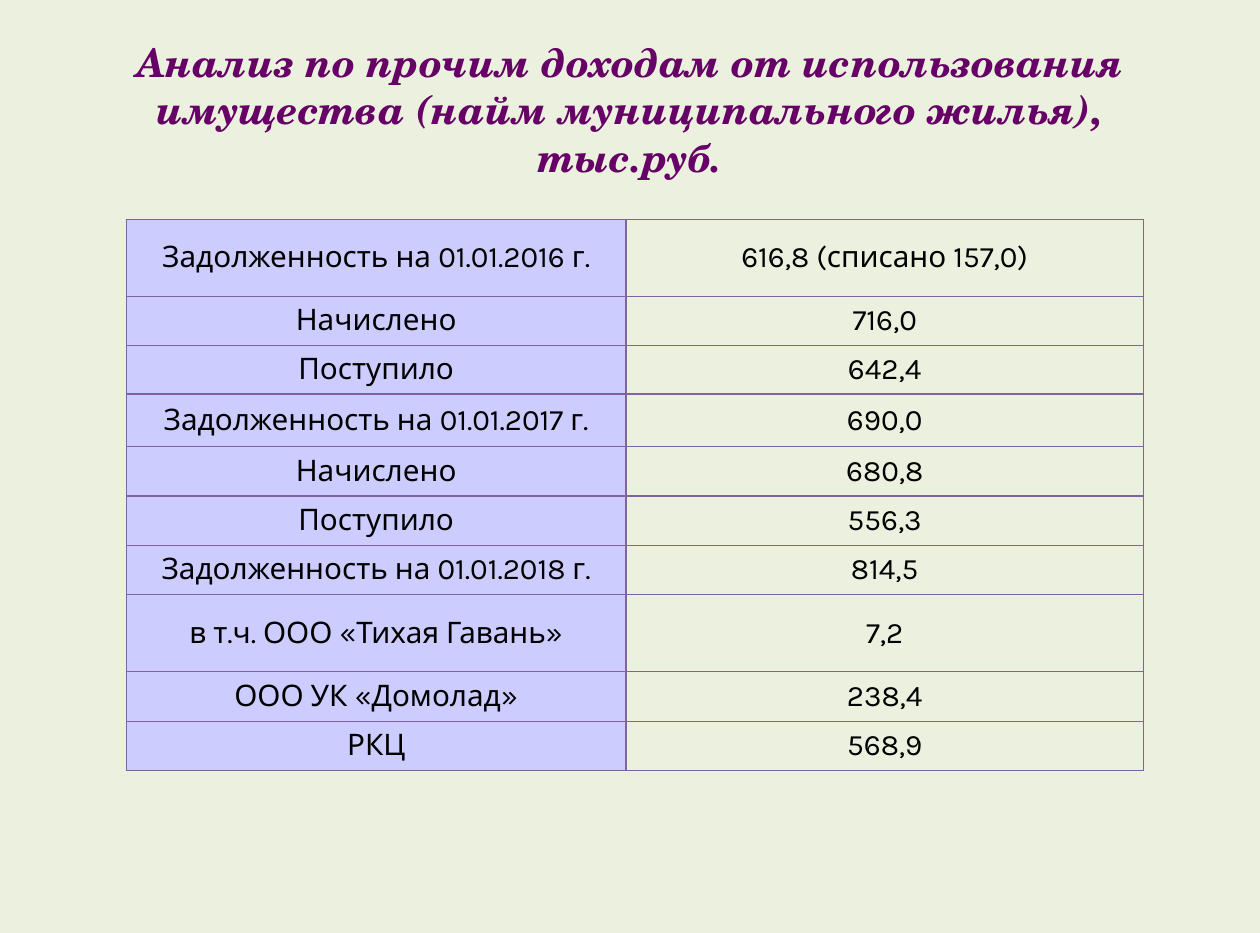
from dataclasses import dataclass

from lxml.etree import SubElement
from pptx import Presentation
from pptx.dml.color import RGBColor
from pptx.enum.text import MSO_ANCHOR, PP_ALIGN
from pptx.oxml.ns import qn
from pptx.util import Cm, Pt


@dataclass(frozen=True)
class Theme:
    """Colours, fonts and sizes of the slide."""

    background: str = "EBF1DE"
    label_fill: str = "CCCCFF"
    border: str = "8064A2"
    title_color: str = "660066"
    text_color: str = "000000"
    title_font: str = "TeX Gyre Schola"
    table_font: str = "Karla"
    title_size: int = 24
    table_size: int = 18
    border_width: int = 1


THEME = Theme()

TITLE = (
    "Анализ по прочим доходам от использования имущества "
    "(найм муниципального жилья), тыс.руб."
)

COLUMN_WIDTHS = (10.71, 11.09)

ROWS = (
    (1.65, "Задолженность на 01.01.2016 г.", "616,8 (списано 157,0)"),
    (1.05, "Начислено", "716,0"),
    (1.05, "Поступило", "642,4"),
    (1.12, "Задолженность на 01.01.2017 г.", "690,0"),
    (1.06, "Начислено", "680,8"),
    (1.06, "Поступило", "556,3"),
    (1.06, "Задолженность на 01.01.2018 г.", "814,5"),
    (1.65, "в т.ч. ООО «Тихая Гавань»", "7,2"),
    (1.06, "ООО УК «Домолад»", "238,4"),
    (1.06, "РКЦ", "568,9"),
)


def write_centred(para, text, font_name, size, color):
    """Write one centred paragraph and return its font."""
    para.text = text
    para.alignment = PP_ALIGN.CENTER
    para.font.name = font_name
    para.font.size = Pt(size)
    para.font.color.rgb = RGBColor.from_string(color)
    return para.font


def add_title(page):
    """Add the bold italic heading."""
    box = page.shapes.add_textbox(Cm(1.22), Cm(0.69), Cm(24.56), Cm(3.33))
    box.text_frame.word_wrap = True
    font = write_centred(
        box.text_frame.paragraphs[0],
        TITLE,
        THEME.title_font,
        THEME.title_size,
        THEME.title_color,
    )
    font.bold = True
    font.italic = True


def set_borders(cell):
    """Draw the four borders of a cell ahead of its fill."""
    properties = cell._tc.get_or_add_tcPr()
    for side in ("a:lnL", "a:lnR", "a:lnT", "a:lnB"):
        line = SubElement(properties, qn(side), w=str(Pt(THEME.border_width)))
        fill = SubElement(line, qn("a:solidFill"))
        SubElement(fill, qn("a:srgbClr"), val=THEME.border)


def fill_cell(cell, text, color):
    """Set the text, borders and fill of a cell."""
    set_borders(cell)
    cell.fill.solid()
    cell.fill.fore_color.rgb = RGBColor.from_string(color)
    cell.vertical_anchor = MSO_ANCHOR.MIDDLE
    write_centred(
        cell.text_frame.paragraphs[0],
        text,
        THEME.table_font,
        THEME.table_size,
        THEME.text_color,
    )


def add_income_table(page):
    """Add the table of debts, charges and receipts."""
    width = sum(COLUMN_WIDTHS)
    height = sum(row[0] for row in ROWS)
    table = page.shapes.add_table(
        len(ROWS), len(COLUMN_WIDTHS), Cm(2.71), Cm(4.7), Cm(width), Cm(height)
    ).table
    table.first_row = False
    table.horz_banding = False
    for column, column_width in zip(table.columns, COLUMN_WIDTHS):
        column.width = Cm(column_width)
    for row, (row_height, label, value) in zip(table.rows, ROWS):
        row.height = Cm(row_height)
        fill_cell(row.cells[0], label, THEME.label_fill)
        fill_cell(row.cells[1], value, THEME.background)


def main():
    """Build and save the deck."""
    deck = Presentation()
    deck.slide_width = Cm(27.01)
    deck.slide_height = Cm(20)
    page = deck.slides.add_slide(deck.slide_layouts[6])
    page.background.fill.solid()
    page.background.fill.fore_color.rgb = RGBColor.from_string(THEME.background)
    add_income_table(page)
    add_title(page)
    deck.save("out.pptx")


if __name__ == "__main__":
    main()
